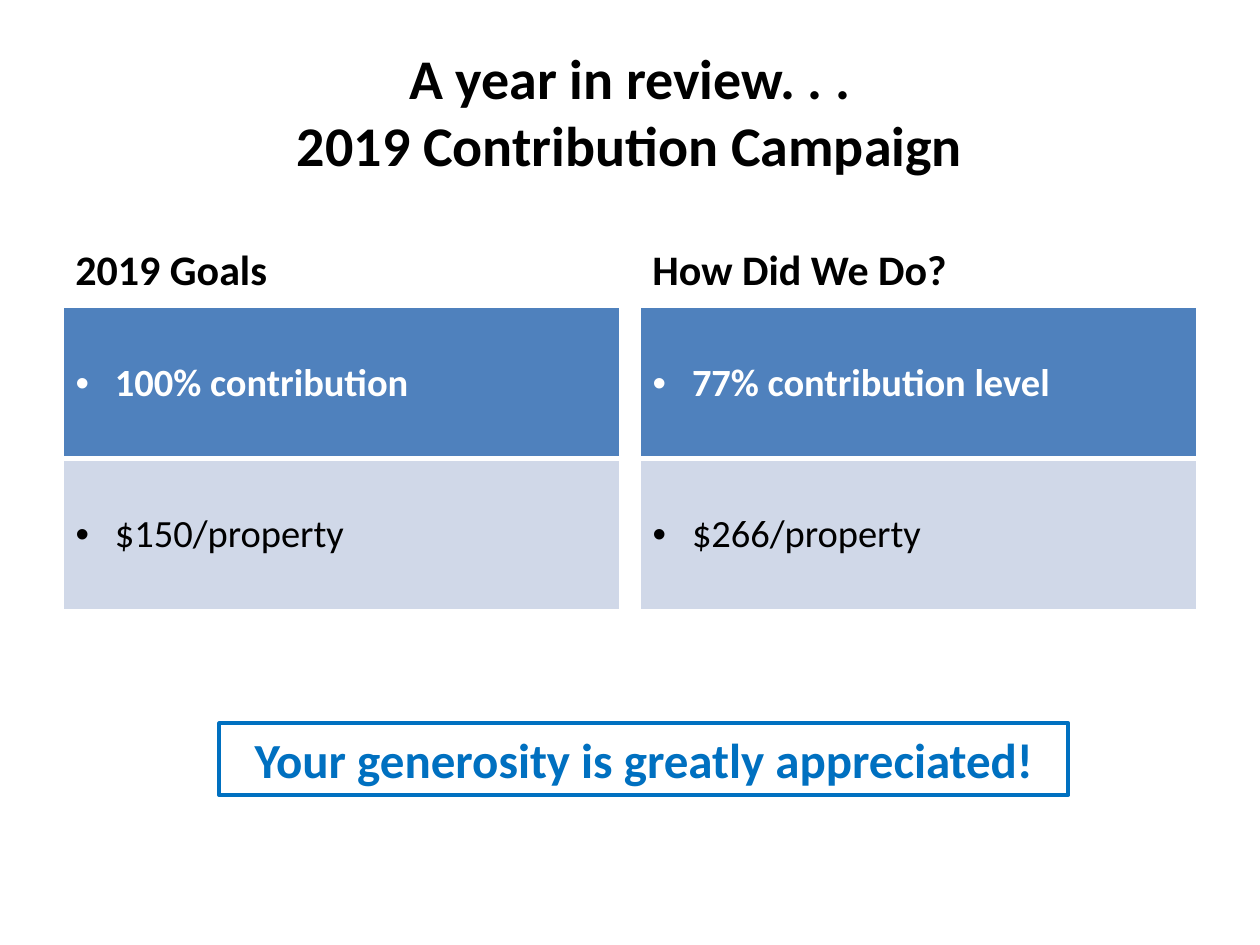
from lxml import etree
from pptx import Presentation
from pptx.dml.color import RGBColor
from pptx.enum.shapes import MSO_SHAPE
from pptx.enum.text import MSO_ANCHOR, PP_ALIGN
from pptx.oxml.ns import qn
from pptx.util import Pt

RECTANGLE = MSO_SHAPE.RECTANGLE
MIDDLE, BOTTOM = MSO_ANCHOR.MIDDLE, MSO_ANCHOR.BOTTOM
LEFT, CENTER = PP_ALIGN.LEFT, PP_ALIGN.CENTER
COLORS = {
    "black": "000000",
    "white": "FFFFFF",
    "header": "4F81BD",
    "band": "D0D8E8",
    "accent": "0070C0",
}
COLUMN_WIDTH = 318.24
ROW_HEIGHT = 86.4
COLUMNS = [
    (36, "2019 Goals", ["100% contribution", "$150/property"]),
    (365.76, "How Did We Do?", ["77% contribution level", "$266/property"]),
]
ROW_STYLES = [("header", "white", True, 3), ("band", "black", False, 1)]


def write(text_frame, text, size, color, bold, align, anchor):
    text_frame.word_wrap = True
    text_frame.vertical_anchor = anchor
    text_frame.text = text
    paragraph = text_frame.paragraphs[0]
    paragraph.alignment = align
    for run in paragraph.runs:
        run.font.name = "Calibri"
        run.font.size = Pt(size)
        run.font.bold = bold
        run.font.color.rgb = RGBColor.from_string(COLORS[color])
    return paragraph


def add_border(cell_properties, side, width):
    line = etree.SubElement(cell_properties, qn(f"a:ln{side}"), w=str(Pt(width)))
    fill = etree.SubElement(line, qn("a:solidFill"))
    etree.SubElement(fill, qn("a:srgbClr"), val=COLORS["white"])


presentation = Presentation()
presentation.slide_width = Pt(720)
presentation.slide_height = Pt(540)
slide = presentation.slides.add_slide(presentation.slide_layouts[6])

title = slide.shapes.add_textbox(Pt(36), Pt(18), Pt(648), Pt(90))
write(title.text_frame, "A year in review. . .\v2019 Contribution Campaign",
      32, "black", True, CENTER, MIDDLE)

for left, heading, entries in COLUMNS:
    heading_box = slide.shapes.add_textbox(Pt(left), Pt(121), Pt(COLUMN_WIDTH), Pt(50.4))
    write(heading_box.text_frame, heading, 24, "black", True, LEFT, BOTTOM)

    table = slide.shapes.add_table(
        2, 1, Pt(left), Pt(175.7), Pt(COLUMN_WIDTH), Pt(2 * ROW_HEIGHT)).table
    for row, (entry, style) in enumerate(zip(entries, ROW_STYLES)):
        fill, color, bold, bottom_width = style
        table.rows[row].height = Pt(ROW_HEIGHT)
        cell = table.cell(row, 0)
        paragraph = write(cell.text_frame, entry, 22, color, bold, LEFT, MIDDLE)
        cell.vertical_anchor = MIDDLE
        properties = paragraph._p.get_or_add_pPr()
        properties.set("marL", str(Pt(22.5)))
        properties.set("indent", str(-Pt(22.5)))
        etree.SubElement(properties, qn("a:buFont"), typeface="Arial")
        etree.SubElement(properties, qn("a:buChar"), char="•")
        cell_properties = cell._tc.get_or_add_tcPr()
        for side, width in zip("LRTB", [1, 1, ROW_STYLES[0][3] if row else 1, bottom_width]):
            add_border(cell_properties, side, width)
        cell.fill.solid()
        cell.fill.fore_color.rgb = RGBColor.from_string(COLORS[fill])

thanks = slide.shapes.add_shape(RECTANGLE, Pt(125.3), Pt(413.3), Pt(485.3), Pt(41))
thanks.shadow.inherit = False
thanks.fill.background()
thanks.line.color.rgb = RGBColor.from_string(COLORS["accent"])
thanks.line.width = Pt(2.25)
write(thanks.text_frame, "Your generosity is greatly appreciated!",
      28, "accent", True, CENTER, MIDDLE)

presentation.save("out.pptx")
